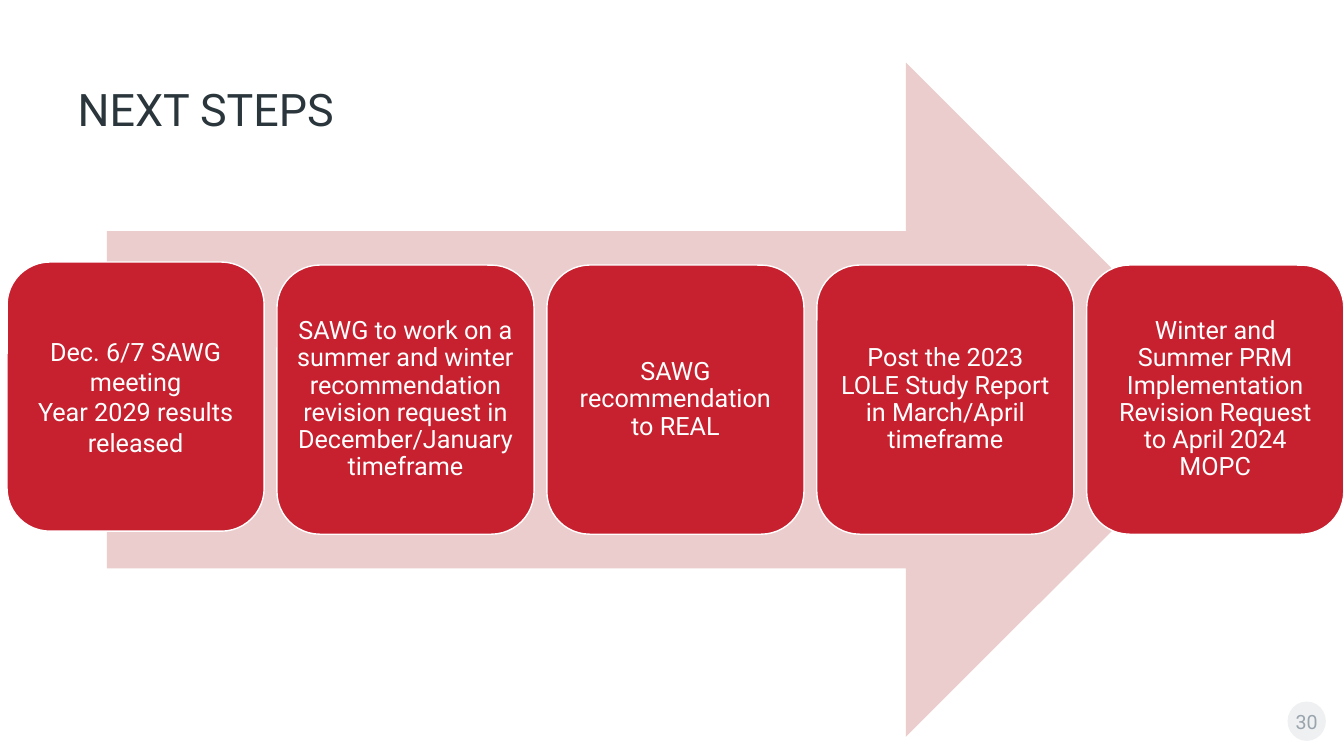
"""Build the NEXT STEPS slide with five process steps on an arrow."""
from pptx import Presentation
from pptx.dml.color import RGBColor
from pptx.enum.shapes import MSO_SHAPE
from pptx.enum.text import MSO_ANCHOR, MSO_AUTO_SIZE, PP_ALIGN
from pptx.util import Inches, Pt

COLORS = {
    "title": "2A363B",
    "arrow": "EBCDCD",
    "step": "C7202F",
    "white": "FFFFFF",
    "badge": "EEF0F1",
    "number": "99A4AD",
}
STEPS = [
    ["Dec. 6/7 SAWG meeting", "Year 2029 results released"],
    ["SAWG to work on a summer and winter recommendation revision request "
     "in December/January timeframe"],
    ["SAWG recommendation to REAL"],
    ["Post the 2023 LOLE Study Report in March/April timeframe"],
    ["Winter and Summer PRM Implementation Revision Request to April 2024 MOPC"],
]


def add_filled_shape(kind, left, top, width, height, color):
    shape = slide.shapes.add_shape(
        kind, Inches(left), Inches(top), Inches(width), Inches(height))
    shape.shadow.inherit = False
    shape.fill.solid()
    shape.fill.fore_color.rgb = RGBColor.from_string(COLORS[color])
    shape.line.fill.background()
    return shape


def write_paragraph(paragraph, text, size, color, alignment, spacing):
    paragraph.alignment = alignment
    paragraph.line_spacing = spacing
    run = paragraph.add_run()
    run.text = text
    run.font.name = "Roboto"
    run.font.size = Pt(size)
    run.font.color.rgb = RGBColor.from_string(COLORS[color])


presentation = Presentation()
presentation.slide_width = Inches(13.33)
presentation.slide_height = Inches(7.5)
slide = presentation.slides.add_slide(presentation.slide_layouts[5])

badge = add_filled_shape(MSO_SHAPE.OVAL, 12.77, 6.96, 0.38, 0.39, "badge")
badge_frame = badge.text_frame
badge_frame.word_wrap = False
badge_frame.vertical_anchor = MSO_ANCHOR.MIDDLE
badge_frame.margin_left = badge_frame.margin_right = Inches(0)
badge_frame.margin_top = badge_frame.margin_bottom = Inches(0)
write_paragraph(badge_frame.paragraphs[0], "30", 14, "number", PP_ALIGN.CENTER, 1.0)

title = slide.shapes.title
title.left, title.top = Inches(0.67), Inches(0.62)
title.width, title.height = Inches(11.97), Inches(1.03)
title.text_frame.auto_size = MSO_AUTO_SIZE.NONE
title.text_frame.vertical_anchor = MSO_ANCHOR.MIDDLE
write_paragraph(title.text_frame.paragraphs[0], "NEXT STEPS", 32, "title",
                PP_ALIGN.LEFT, 0.75)

add_filled_shape(MSO_SHAPE.RIGHT_ARROW, 1.06, 0.62, 11.27, 6.69, "arrow")

for index, texts in enumerate(STEPS):
    top = 2.6 if index == 0 else 2.63
    spacing = 1.0 if index == 0 else 0.9
    step = add_filled_shape(MSO_SHAPE.ROUNDED_RECTANGLE,
                            0.07 + index * 2.677, top, 2.55, 2.67, "step")
    step.line.color.rgb = RGBColor.from_string(COLORS["white"])
    step.line.width = Pt(1)
    frame = step.text_frame
    frame.word_wrap = True
    frame.vertical_anchor = MSO_ANCHOR.MIDDLE
    frame.margin_left = frame.margin_right = Inches(0.07)
    frame.margin_top = frame.margin_bottom = Inches(0.07)
    for number, text in enumerate(texts):
        paragraph = frame.add_paragraph() if number else frame.paragraphs[0]
        write_paragraph(paragraph, text, 18, "white", PP_ALIGN.CENTER, spacing)

presentation.save("out.pptx")
